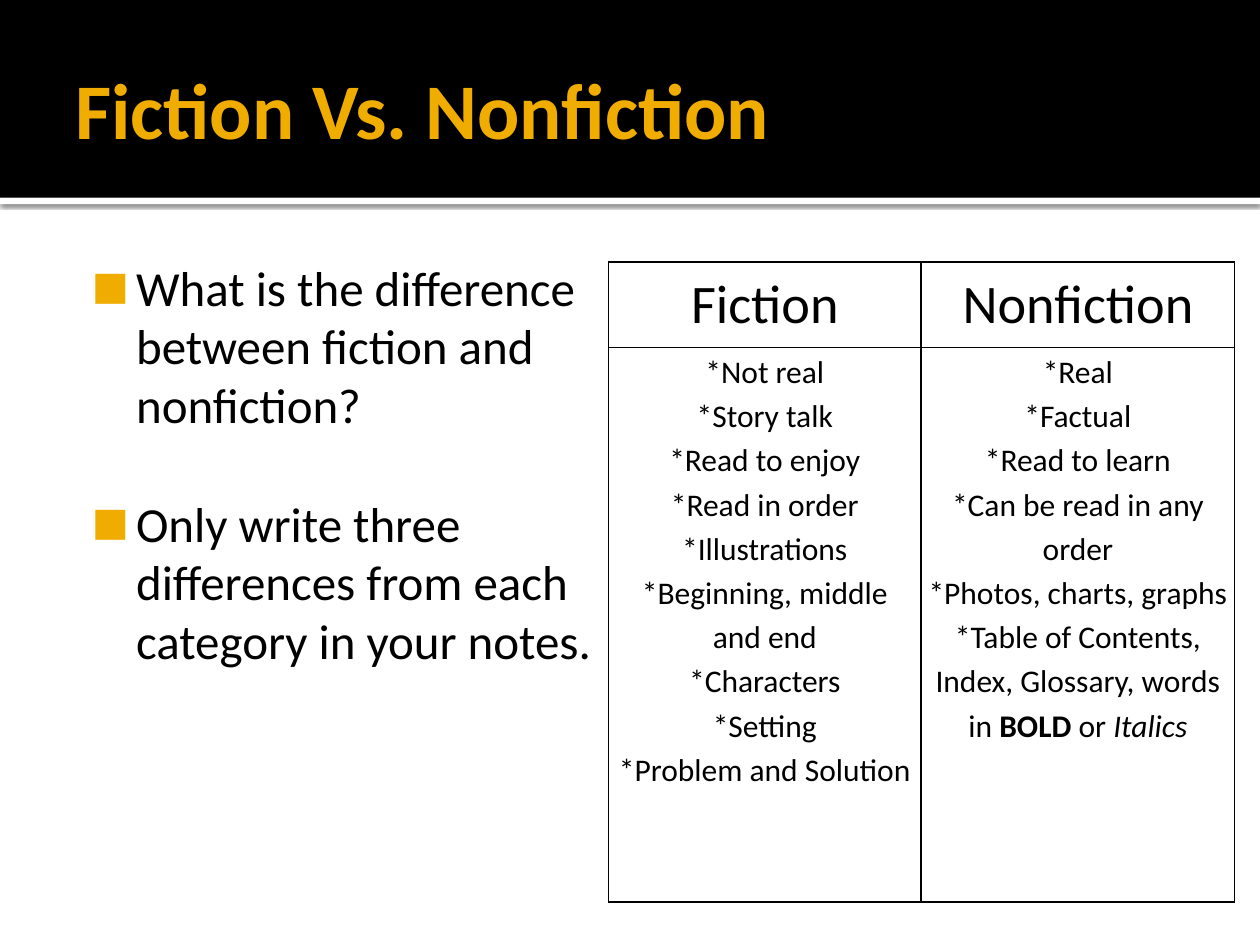
from dataclasses import dataclass

from pptx import Presentation
from pptx.dml.color import RGBColor
from pptx.enum.shapes import MSO_SHAPE
from pptx.enum.text import MSO_ANCHOR, MSO_AUTO_SIZE, PP_ALIGN
from pptx.oxml import parse_xml
from pptx.oxml.ns import nsdecls
from pptx.util import Inches, Pt


@dataclass(frozen=True)
class Theme:
    font: str = "Calibri"
    black: RGBColor = RGBColor(0, 0, 0)
    white: RGBColor = RGBColor(255, 255, 255)
    gold: RGBColor = RGBColor(0xF0, 0xAD, 0x00)
    title: Pt = Pt(45)
    body: Pt = Pt(28)
    heading: Pt = Pt(31)
    cell: Pt = Pt(18)


theme = Theme()


def format_run(run, size, color=theme.black, bold=False, italic=False):
    run.font.name, run.font.size = theme.font, size
    run.font.color.rgb = color
    run.font.bold, run.font.italic = bold, italic


def set_margins(frame, left, top, right, bottom):
    frame.margin_left, frame.margin_top = Inches(left), Inches(top)
    frame.margin_right, frame.margin_bottom = Inches(right), Inches(bottom)


prs = Presentation()
prs.slide_width, prs.slide_height = Inches(10), Inches(7.5)
slide = prs.slides.add_slide(prs.slide_layouts[1])

# Header band and the white strip below it, both behind the title
header_parts = [(1.57, 0.05, theme.white), (0, 1.57, theme.black)]
for depth, (top, height, color) in enumerate(header_parts):
    band = slide.shapes.add_shape(
        MSO_SHAPE.RECTANGLE, 0, Inches(top), Inches(10), Inches(height))
    band.shadow.inherit = False
    band.fill.solid()
    band.fill.fore_color.rgb = color
    band.line.fill.background()
    if color == theme.white:
        effects = band._element.spPr.find(
            "{http://schemas.openxmlformats.org/drawingml/2006/main}effectLst")
        effects.append(parse_xml(
            f'<a:outerShdw {nsdecls("a")} blurRad="{Pt(2.5)}" dist="{Pt(0.8)}" '
            'dir="5400000" algn="t" rotWithShape="0"><a:srgbClr val="000000">'
            '<a:alpha val="60000"/></a:srgbClr></a:outerShdw>'))
    slide.shapes._spTree.insert(2 + depth, band._element)

# Title
title = slide.shapes.title
title.left, title.top = Inches(0.5), Inches(0.17)
title.width, title.height = Inches(9), Inches(1.37)
title.text_frame.text = "Fiction Vs. Nonfiction"
title.text_frame.auto_size = MSO_AUTO_SIZE.NONE
title.text_frame.vertical_anchor = MSO_ANCHOR.MIDDLE
set_margins(title.text_frame, 0.1, 0.05, 0.05, 0.05)
title.text_frame.paragraphs[0].alignment = PP_ALIGN.LEFT
format_run(title.text_frame.paragraphs[0].runs[0], theme.title, theme.gold, bold=True)

# Questions for the class
questions = slide.placeholders[1]
questions.left, questions.top = Inches(0.5), Inches(1.94)
questions.width, questions.height = Inches(4.42), Inches(5.06)
questions.text_frame.text = (
    "What is the difference between fiction and nonfiction?\n"
    "Only write three differences from each category in your notes.")
questions.text_frame.auto_size = MSO_AUTO_SIZE.NONE
set_margins(questions.text_frame, 0.1, 0.1, 0.1, 0.05)
for paragraph, gap in zip(questions.text_frame.paragraphs, (0, 34)):
    paragraph.space_before = Pt(gap)
    format_run(paragraph.runs[0], theme.body)
    properties = paragraph._p.get_or_add_pPr()
    properties.set("marL", str(Inches(0.48)))
    properties.set("indent", str(Inches(-0.35)))
    for bullet in (f'<a:buClr {nsdecls("a")}><a:srgbClr val="{theme.gold}"/></a:buClr>',
                   f'<a:buSzPct {nsdecls("a")} val="80000"/>',
                   f'<a:buFont {nsdecls("a")} typeface="{theme.font}"/>',
                   f'<a:buChar {nsdecls("a")} char="■"/>'):
        properties.append(parse_xml(bullet))

# Comparison table
comparison = {
    "Fiction": [
        "*Not real", "*Story talk", "*Read to enjoy", "*Read in order",
        "*Illustrations", "*Beginning, middle and end", "*Characters",
        "*Setting", "*Problem and Solution"],
    "Nonfiction": [
        "*Real", "*Factual", "*Read to learn", "*Can be read in any order",
        "*Photos, charts, graphs",
        "*Table of Contents, Index, Glossary, words in "],
}
table = slide.shapes.add_table(
    2, 2, Inches(4.83), Inches(2.08), Inches(4.97), Inches(5.08)).table
table.first_row = table.horz_banding = False
for column, width in zip(table.columns, (2.48, 2.49)):
    column.width = Inches(width)
for row, height in zip(table.rows, (0.68, 4.4)):
    row.height = Inches(height)

for col, (heading, traits) in enumerate(comparison.items()):
    table.cell(0, col).text_frame.text = heading
    table.cell(1, col).text_frame.text = "\n".join(traits)

# The last nonfiction trait shows its own type styles
text_features = table.cell(1, 1).text_frame.paragraphs[-1]
for words in ("BOLD", " or ", "Italics"):
    text_features.add_run().text = words

for index, cell in enumerate(table.iter_cells()):
    size = theme.heading if index < 2 else theme.cell
    set_margins(cell, 0.05, 0, 0.05, 0)
    for paragraph in cell.text_frame.paragraphs:
        paragraph.alignment = PP_ALIGN.CENTER
        paragraph.line_spacing = 1.15
        for run in paragraph.runs:
            format_run(run, size, bold=run.text == "BOLD", italic=run.text == "Italics")
    cell_properties = cell._tc.get_or_add_tcPr()
    for side in ("lnL", "lnR", "lnT", "lnB"):
        cell_properties.append(parse_xml(
            f'<a:{side} {nsdecls("a")} w="{Pt(1)}"><a:solidFill>'
            f'<a:srgbClr val="{theme.black}"/></a:solidFill></a:{side}>'))
    cell.fill.background()

prs.save("out.pptx")
